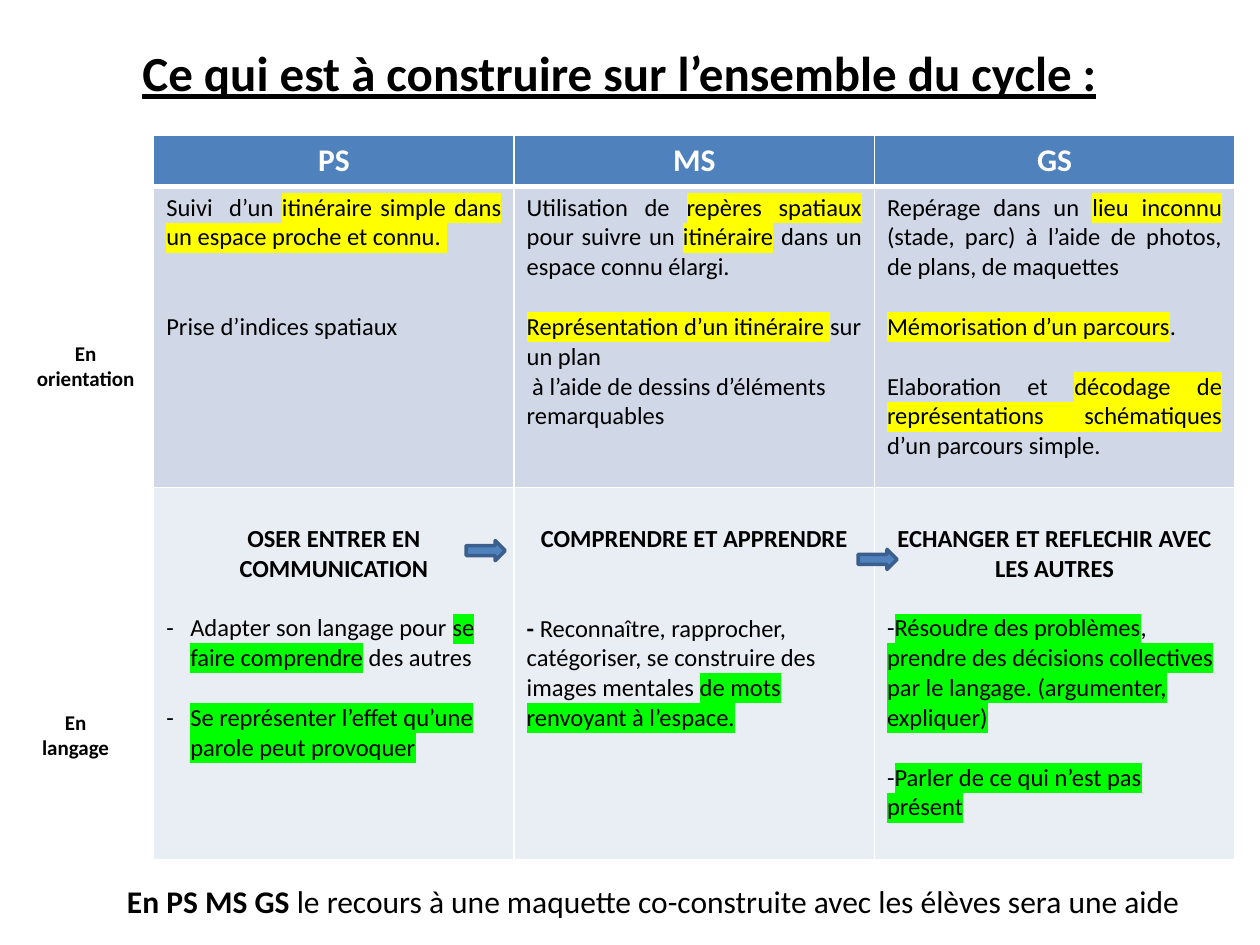
from lxml.etree import SubElement
from pptx import Presentation
from pptx.dml.color import RGBColor
from pptx.enum.shapes import MSO_SHAPE
from pptx.enum.text import MSO_ANCHOR, MSO_AUTO_SIZE, PP_ALIGN
from pptx.oxml import parse_xml
from pptx.oxml.ns import nsdecls, qn
from pptx.util import Inches, Pt

BLUE, DARK_BLUE, WHITE, BLACK = "4F81BD", "3A5F8C", "FFFFFF", "000000"
YELLOW, GREEN = "FFFF00", "00FF00"
LEFT, CENTER, JUSTIFY = PP_ALIGN.LEFT, PP_ALIGN.CENTER, PP_ALIGN.JUSTIFY
LINE = 17.1  # height in points of one 14-point line

# Paragraphs are (text, alignment, blank lines above, bulleted).
# In the text, *stars* mark bold and |bars| mark highlighting.
ORIENTATION = [
    [("Suivi  d’un |itinéraire simple dans un espace proche et connu. |", JUSTIFY, 0, False),
     ("Prise d’indices spatiaux", JUSTIFY, 2, False)],
    [("Utilisation de |repères spatiaux |pour suivre un |itinéraire| dans un espace connu élargi. ",
      JUSTIFY, 0, False),
     ("|Représentation d’un itinéraire |sur un plan", LEFT, 1, False),
     (" à l’aide de dessins d’éléments remarquables", LEFT, 0, False)],
    [("Repérage dans un |lieu inconnu |(stade, parc) à l’aide de photos, de plans, de maquettes",
      JUSTIFY, 0, False),
     ("|Mémorisation d’un parcours|. ", JUSTIFY, 1, False),
     ("Elaboration et |décodage de représentations schématiques |d’un parcours simple.",
      JUSTIFY, 1, False)],
]
LANGUAGE = [
    [("*OSER ENTRER EN COMMUNICATION*", CENTER, 0, False),
     ("Adapter son langage pour |se faire comprendre| des autres", LEFT, 1, True),
     ("|Se représenter l’effet qu’une parole peut provoquer|", LEFT, 1, True)],
    [("*COMPRENDRE ET APPRENDRE*", CENTER, 0, False),
     ("*- *Reconnaître, rapprocher, catégoriser, se construire des images mentales "
      "|de mots renvoyant à l’espace.|", LEFT, 2, False)],
    [("*ECHANGER ET REFLECHIR AVEC LES AUTRES*", CENTER, 0, False),
     ("-|Résoudre des problèmes|, |prendre des décisions collectives par le langage. "
      "(argumenter, expliquer)|", LEFT, 1, False),
     ("-|Parler de ce qui n’est pas présent|", LEFT, 1, False)],
]
HEADERS = [[(f"*{level}*", CENTER, 0, False)] for level in ("PS", "MS", "GS")]

# Content, fill, text colour, text size, highlight, height, top margin, top and bottom borders
ROWS = [
    (HEADERS, BLUE, WHITE, 18, None, 0.41, 0.05, 1, 3),
    (ORIENTATION, "D0D8E8", BLACK, 14, YELLOW, 2.39, 0.05, 3, 1),
    (LANGUAGE, "E9EDF4", BLACK, 14, GREEN, 2.95, 0.29, 1, 1),
]


def color(value):
    return RGBColor.from_string(value)


def box(left, top, width, height):
    return [Inches(value) for value in (left, top, width, height)]


class SlideBuilder:
    font_name = "Calibri"

    def __init__(self, slide):
        self.slide = slide

    def add_run(self, paragraph, text, text_color=BLACK, highlight=None, **formats):
        run = paragraph.add_run()
        run.text = text
        for name, value in {"name": self.font_name, **formats}.items():
            setattr(run.font, name, value)
        run.font.color.rgb = color(text_color)
        if highlight:
            mark = parse_xml(f'<a:highlight {nsdecls("a")}><a:srgbClr val="{highlight}"/></a:highlight>')
            run.font._element.find(qn("a:solidFill")).addnext(mark)

    def add_marked_text(self, paragraph, text, size, text_color=BLACK, highlight=None):
        """Write text, turning *stars* into bold and |bars| into highlighting."""
        for bold, section in enumerate(text.split("*")):
            for marked, piece in enumerate(section.split("|")):
                if piece:
                    self.add_run(paragraph, piece, text_color, highlight if marked % 2 else None,
                                 size=Pt(size), bold=bold % 2 == 1)

    def title(self, text, position):
        title = self.slide.shapes.title
        title.left, title.top, title.width, title.height = box(*position)
        frame = title.text_frame
        frame.vertical_anchor = MSO_ANCHOR.TOP
        frame.auto_size = MSO_AUTO_SIZE.NONE
        paragraph = frame.paragraphs[0]
        paragraph.alignment = CENTER
        self.add_run(paragraph, text, size=Pt(28), bold=True, underline=True)

    def text(self, text, position, size, alignment=CENTER):
        frame = self.slide.shapes.add_textbox(*box(*position)).text_frame
        frame.word_wrap = True
        paragraph = frame.paragraphs[0]
        paragraph.alignment = alignment
        self.add_marked_text(paragraph, text, size)

    def bullet(self, paragraph):
        properties = paragraph._p.get_or_add_pPr()
        properties.set("marL", str(Inches(0.19)))
        properties.set("indent", str(-Inches(0.19)))
        SubElement(properties, qn("a:buFont"), typeface=self.font_name)
        SubElement(properties, qn("a:buChar"), char="-")

    def borders(self, cell, top, bottom):
        properties = cell._tc.get_or_add_tcPr()
        for index, (side, width) in enumerate(zip("LRTB", (1, 1, top, bottom))):
            properties.insert(index, parse_xml(
                f'<a:ln{side} {nsdecls("a")} w="{Pt(width)}"><a:solidFill>'
                f'<a:srgbClr val="{WHITE}"/></a:solidFill></a:ln{side}>'))

    def table(self, rows, position):
        table = self.slide.shapes.add_table(len(rows), 3, *box(*position)).table
        for row_index, row in enumerate(rows):
            contents, fill, text_color, size, highlight, height, margin, top, bottom = row
            table.rows[row_index].height = Inches(height)
            for cell, content in zip(table.rows[row_index].cells, contents):
                cell.fill.solid()
                cell.fill.fore_color.rgb = color(fill)
                cell.margin_top = Inches(margin)
                self.borders(cell, top, bottom)
                frame = cell.text_frame
                for index, (text, alignment, gap, bulleted) in enumerate(content):
                    paragraph = frame.add_paragraph() if index else frame.paragraphs[0]
                    paragraph.alignment = alignment
                    if gap:
                        paragraph.space_before = Pt(gap * LINE)
                    if bulleted:
                        self.bullet(paragraph)
                    self.add_marked_text(paragraph, text, size, text_color, highlight)

    def arrow(self, left, top):
        arrow = self.slide.shapes.add_shape(MSO_SHAPE.RIGHT_ARROW, *box(left, top, 0.31, 0.16))
        arrow.shadow.inherit = False
        arrow.fill.solid()
        arrow.fill.fore_color.rgb = color(BLUE)
        arrow.line.color.rgb = color(DARK_BLUE)
        arrow.line.width = Pt(2)


def main():
    presentation = Presentation()
    presentation.slide_width, presentation.slide_height = Inches(10), Inches(7.5)
    builder = SlideBuilder(presentation.slides.add_slide(presentation.slide_layouts[5]))
    builder.title("Ce qui est à construire sur l’ensemble du cycle :", (0.35, 0.29, 9.13, 0.57))
    builder.table(ROWS, (1.22, 1.07, 8.58, 5.75))
    builder.text("*En langage*", (0.14, 5.58, 0.92, 0.5), 12)
    builder.text("*En orientation*", (0.14, 2.65, 1.08, 0.5), 12)
    builder.text("*En PS MS GS *le recours à une maquette co-construite avec les élèves sera une aide",
                 (0.91, 6.95, 8.74, 0.4), 18, LEFT)
    builder.arrow(3.7, 4.29)
    builder.arrow(6.81, 4.36)
    presentation.save("out.pptx")


if __name__ == "__main__":
    main()
